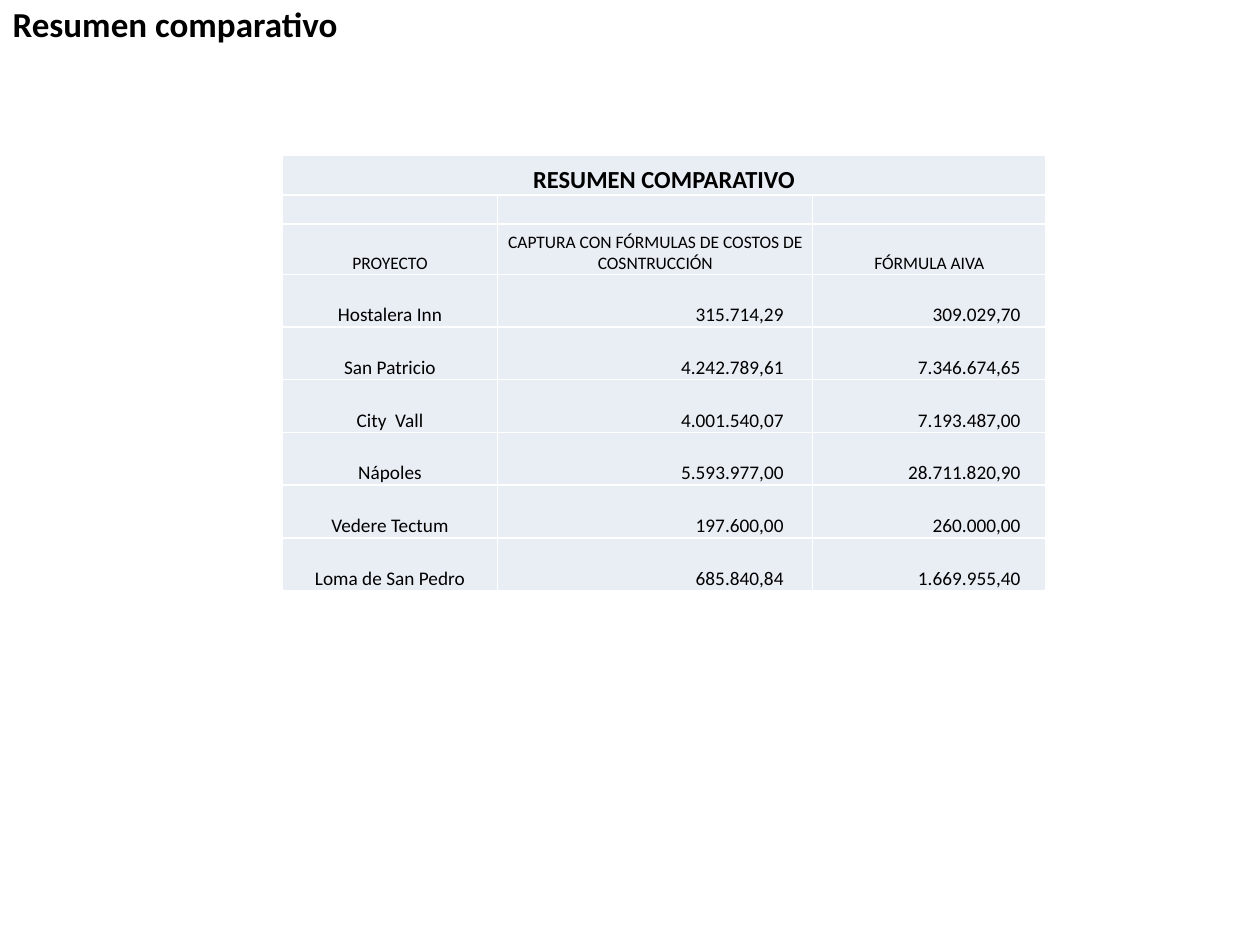
import pptx
import pptx.dml.color
import pptx.enum.text
import pptx.oxml.ns
import pptx.util
from lxml import etree
from pptx.util import Inches

FONT = "Calibri"
COLORS = {"text": "000000", "cell": "E9EDF4", "border": "FFFFFF"}
ALIGN = pptx.enum.text.PP_ALIGN
ANCHOR = pptx.enum.text.MSO_ANCHOR

COLUMN_WIDTHS = [1.71, 2.5, 1.85]
ROW_HEIGHTS = [0.32, 0.23, 0.4] + [0.42] * 6
NUMBER_MARGINS = {1: 0.23, 2: 0.2}
FIRST_PROJECT_ROW = 3
ROWS = [
    ["RESUMEN COMPARATIVO", "", ""],
    ["", "", ""],
    ["PROYECTO", "CAPTURA CON FÓRMULAS DE COSTOS DE COSNTRUCCIÓN", "FÓRMULA AIVA"],
    ["Hostalera Inn", "315.714,29", "309.029,70"],
    ["San Patricio", "4.242.789,61", "7.346.674,65"],
    ["City  Vall", "4.001.540,07", "7.193.487,00"],
    ["Nápoles", "5.593.977,00", "28.711.820,90"],
    ["Vedere Tectum", "197.600,00", "260.000,00"],
    ["Loma de San Pedro", "685.840,84", "1.669.955,40"],
]


def color(name):
    return pptx.dml.color.RGBColor.from_string(COLORS[name])


def format_paragraph(paragraph, size, bold, alignment):
    paragraph.alignment = alignment
    for run in paragraph.runs:
        run.font.name = FONT
        run.font.size = pptx.util.Pt(size)
        run.font.bold = bold
        run.font.color.rgb = color("text")


def add_borders(cell):
    qn = pptx.oxml.ns.qn
    properties = cell._tc.get_or_add_tcPr()
    for side in ("lnL", "lnR", "lnT", "lnB"):
        line = etree.SubElement(properties, qn(f"a:{side}"), w=str(pptx.util.Pt(1)))
        fill = etree.SubElement(line, qn("a:solidFill"))
        etree.SubElement(fill, qn("a:srgbClr"), val=COLORS["border"])


def format_cell(cell, text, size, bold, number_margin):
    """Style one cell; a number_margin aligns the text right at that distance."""
    add_borders(cell)
    cell.fill.solid()
    cell.fill.fore_color.rgb = color("cell")
    cell.vertical_anchor = ANCHOR.BOTTOM
    cell.margin_left = cell.margin_top = Inches(0.01)
    cell.margin_right = Inches(number_margin or 0.01)
    cell.margin_bottom = 0
    cell.text_frame.text = text
    paragraph = cell.text_frame.paragraphs[0]
    format_paragraph(paragraph, size, bold, ALIGN.RIGHT if number_margin else ALIGN.CENTER)
    if not text:
        # An empty cell takes its line height from the end-of-paragraph size.
        paragraph._p.get_or_add_endParaRPr().set("sz", str(size * 100))


def place_title(slide, left, top, width, height):
    title = slide.shapes.title
    title.left, title.top, title.width, title.height = left, top, width, height
    frame = title.text_frame
    frame.text = "Resumen comparativo"
    frame.word_wrap = False
    frame.auto_size = pptx.enum.text.MSO_AUTO_SIZE.NONE
    frame.vertical_anchor = ANCHOR.TOP
    format_paragraph(frame.paragraphs[0], 20, True, ALIGN.LEFT)


def add_comparison_table(slide, left, top, width, height):
    table = slide.shapes.add_table(
        len(ROWS), len(COLUMN_WIDTHS), left, top, width, height
    ).table
    table.first_row = table.horz_banding = False
    for column, share in zip(table.columns, COLUMN_WIDTHS):
        column.width = int(width * share / sum(COLUMN_WIDTHS))
    for row, share in zip(table.rows, ROW_HEIGHTS):
        row.height = int(height * share / sum(ROW_HEIGHTS))

    for row_index, texts in enumerate(ROWS):
        is_project = row_index >= FIRST_PROJECT_ROW
        is_heading = row_index == 0
        size = 14 if is_heading else 11 if is_project else 10
        for column_index, text in enumerate(texts):
            margin = NUMBER_MARGINS.get(column_index) if is_project else None
            format_cell(table.cell(row_index, column_index), text, size, is_heading, margin)
    table.cell(0, 0).merge(table.cell(0, len(COLUMN_WIDTHS) - 1))


def main():
    presentation = pptx.Presentation()
    presentation.slide_width = Inches(10)
    presentation.slide_height = Inches(7.5)
    slide = presentation.slides.add_slide(presentation.slide_layouts.get_by_name("Title Only"))
    place_title(slide, Inches(0), Inches(-0.03), Inches(2.8), Inches(0.44))
    add_comparison_table(slide, Inches(2.24), Inches(1.23), Inches(6.06), Inches(3.46))
    presentation.save("out.pptx")


if __name__ == "__main__":
    main()
